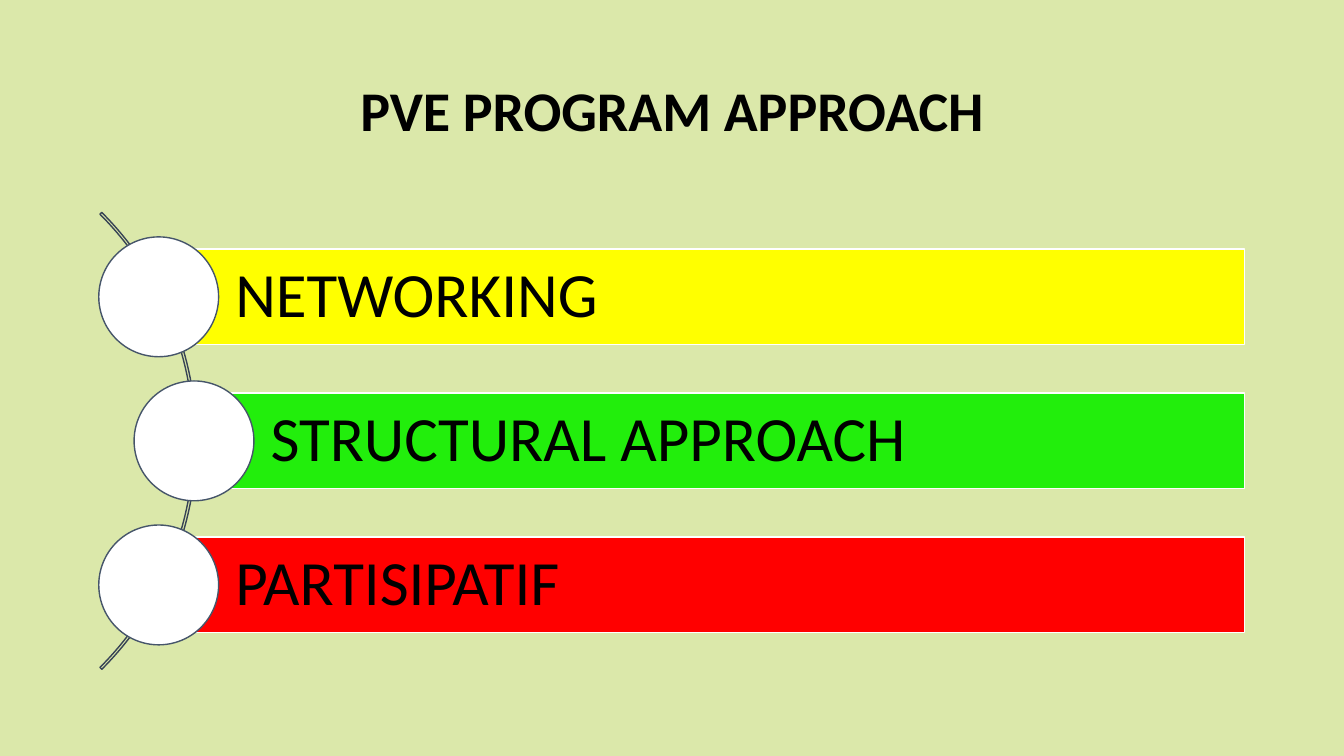
from pptx import Presentation
from pptx.dml.color import RGBColor
from pptx.enum import shapes, text
from pptx.util import Cm, Pt

BACKGROUND = RGBColor(0xDB, 0xE8, 0xAA)
BLACK = RGBColor(0x00, 0x00, 0x00)
WHITE = RGBColor(0xFF, 0xFF, 0xFF)
YELLOW = RGBColor(0xFF, 0xFF, 0x00)
GREEN = RGBColor(0x22, 0xEE, 0x0C)
RED = RGBColor(0xFF, 0x00, 0x00)
ARC_LINE = RGBColor(0x38, 0x44, 0x55)
CIRCLE_LINE = RGBColor(0x46, 0x55, 0x6A)

FONT = "Calibri"
MIDDLE = 11.11  # height of the centre of the list, in cm
PITCH = 3.63
BAR_RIGHT = 31.37
BAR_HEIGHT = 2.41
CIRCLE_SIZE = 3.02
ARC_SIZE = 16.28
ARC_CENTRE = -3.19

APPROACHES = [
    ("NETWORKING", YELLOW, 4.0),
    ("STRUCTURAL APPROACH", GREEN, 4.89),
    ("PARTISIPATIF", RED, 4.0),
]


def write(frame, words, size, align, bold=False):
    frame.word_wrap = True
    frame.vertical_anchor = text.MSO_ANCHOR.MIDDLE
    para = frame.paragraphs[0]
    para.alignment = align
    para.line_spacing = 0.9
    span = para.add_run()
    span.text = words
    span.font.name = FONT
    span.font.size = Pt(size)
    span.font.bold = bold
    span.font.color.rgb = BLACK


def add_shape(page, kind, left, top, width, height, fill, line):
    """Add a preset shape, measured in cm; a fill of None leaves it open."""
    shape = page.shapes.add_shape(kind, Cm(left), Cm(top), Cm(width), Cm(height))
    shape.shadow.inherit = False
    if fill is None:
        shape.fill.background()
    else:
        shape.fill.solid()
        shape.fill.fore_color.rgb = fill
    shape.line.color.rgb = line
    shape.line.width = Pt(1)
    return shape


def add_title(page, words):
    title = page.shapes.title
    title.left, title.top = Cm(2.33), Cm(1.01)
    title.width, title.height = Cm(29.21), Cm(3.68)
    write(title.text_frame, words, 40, text.PP_ALIGN.CENTER, bold=True)


def add_arc(page):
    arc = add_shape(page, shapes.MSO_SHAPE.BLOCK_ARC,
                    ARC_CENTRE - ARC_SIZE / 2, MIDDLE - ARC_SIZE / 2,
                    ARC_SIZE, ARC_SIZE, None, ARC_LINE)
    for index, value in enumerate((189, 27, 0.004)):
        arc.adjustments[index] = value


def add_approach(page, words, colour, left, centre):
    """Add a bar with its words and a circle centred on its left end."""
    bar = add_shape(page, shapes.MSO_SHAPE.RECTANGLE, left, centre - BAR_HEIGHT / 2,
                    BAR_RIGHT - left, BAR_HEIGHT, colour, WHITE)
    frame = bar.text_frame
    frame.margin_left = Cm(1.93)
    frame.margin_top = frame.margin_right = frame.margin_bottom = Cm(0.3)
    write(frame, words, 45, text.PP_ALIGN.LEFT)
    add_shape(page, shapes.MSO_SHAPE.OVAL, left - CIRCLE_SIZE / 2,
              centre - CIRCLE_SIZE / 2, CIRCLE_SIZE, CIRCLE_SIZE, WHITE, CIRCLE_LINE)


def main():
    deck = Presentation()
    deck.slide_width, deck.slide_height = Cm(33.87), Cm(19.05)
    page = deck.slides.add_slide(deck.slide_layouts.get_by_name("Title Only"))
    page.background.fill.solid()
    page.background.fill.fore_color.rgb = BACKGROUND
    add_title(page, "PVE PROGRAM APPROACH")
    add_arc(page)
    for row, (words, colour, left) in enumerate(APPROACHES):
        add_approach(page, words, colour, left, MIDDLE + (row - 1) * PITCH)
    deck.save("out.pptx")


if __name__ == "__main__":
    main()
